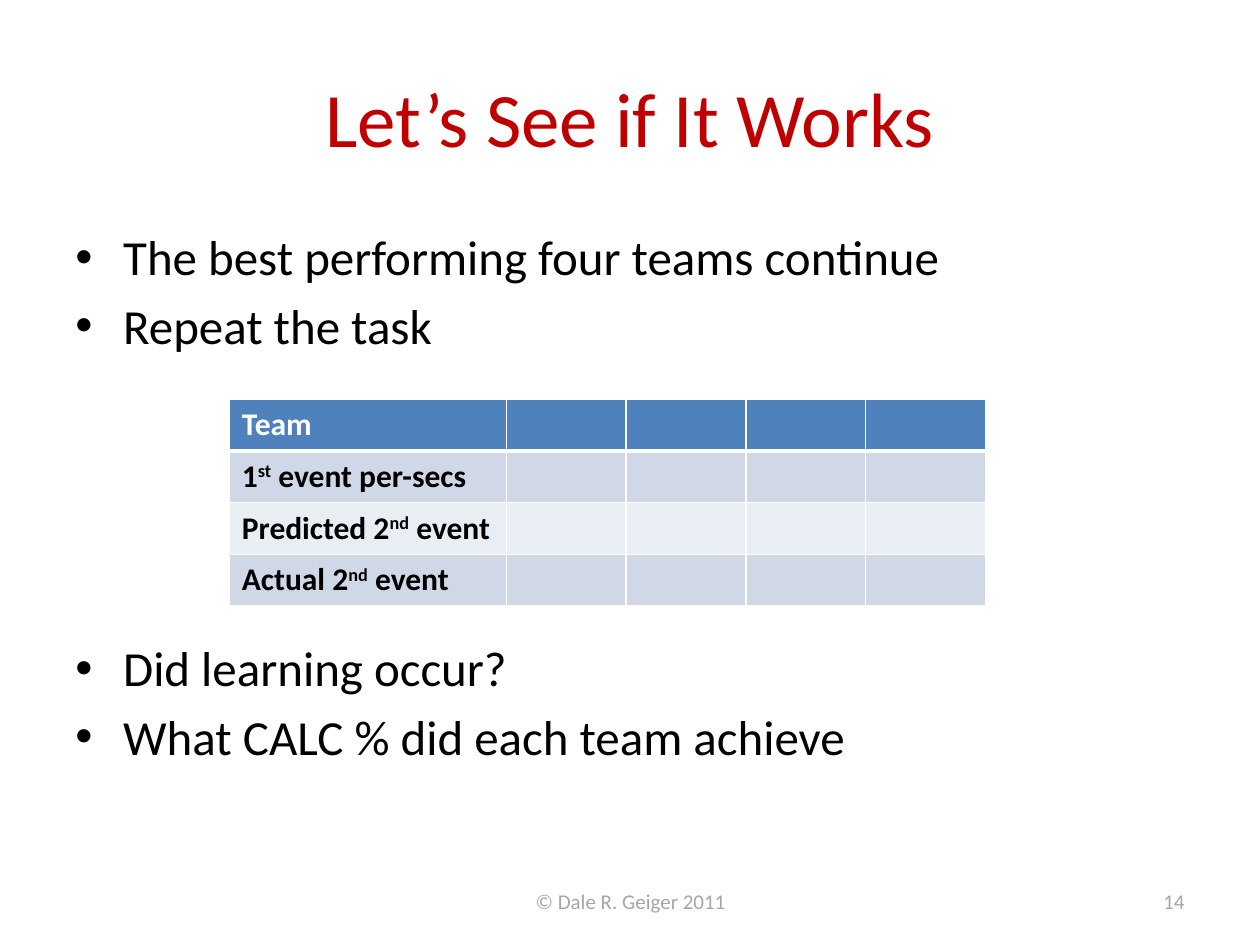
from lxml import etree
from pptx import Presentation
from pptx.dml.color import RGBColor
from pptx.enum import text as t
from pptx.oxml import ns
from pptx.util import Inches, Pt

TITLE = "Let’s See if It Works"
BULLETS = [
    ("The best performing four teams continue", 5.6),
    ("Repeat the task", 5.6),
    ("Did learning occur?", 162),
    ("What CALC % did each team achieve", 5.6),
]
FOOTER = "© Dale R. Geiger 2011"
PAGE = "14"
ROW_LABELS = ["Team", "1^st^ event per-secs", "Predicted 2^nd^ event", "Actual 2^nd^ event"]
ROW_FILLS = ["4F81BD", "D0D8E8", "E9EDF4", "D0D8E8"]
COLUMN_WIDTHS = [2.2] + [0.95] * 4
ROW_HEIGHT = 0.41


def color(value):
    return RGBColor.from_string(value)


def write(paragraph, content, size=18, ink="000000", bold=False,
          align=t.PP_ALIGN.LEFT, before=0, bullet=False):
    paragraph.alignment = align
    paragraph.space_before = Pt(before)
    if bullet:
        props = paragraph._p.get_or_add_pPr()
        props.set("marL", str(Inches(0.38)))
        props.set("indent", str(Inches(-0.38)))
        etree.SubElement(props, ns.qn("a:buFont")).set("typeface", "Arial")
        etree.SubElement(props, ns.qn("a:buChar")).set("char", "•")
    for index, part in enumerate(content.split("^")):
        run = paragraph.add_run()
        run.text = part
        font = run.font
        font.name, font.size, font.bold = "Calibri", Pt(size), bold
        font.color.rgb = color(ink)
        if index % 2:
            run._r.get_or_add_rPr().set("baseline", "30000")


def add_frame(slide, left, top, width, height, anchor=t.MSO_ANCHOR.MIDDLE):
    frame = slide.shapes.add_textbox(*map(Inches, (left, top, width, height))).text_frame
    frame.word_wrap = True
    frame.vertical_anchor = anchor
    return frame


def add_borders(cell, widths):
    props = cell._tc.get_or_add_tcPr()
    for side, width in widths.items():
        line = etree.SubElement(props, ns.qn(f"a:ln{side}"), w=str(Pt(width)))
        fill = etree.SubElement(line, ns.qn("a:solidFill"))
        etree.SubElement(fill, ns.qn("a:srgbClr"), val="FFFFFF")


def add_results(slide):
    results = slide.shapes.add_table(
        len(ROW_LABELS), len(COLUMN_WIDTHS), Inches(1.82), Inches(3.17),
        Inches(sum(COLUMN_WIDTHS)), Inches(ROW_HEIGHT * len(ROW_LABELS))).table
    for column, width in zip(results.columns, COLUMN_WIDTHS):
        column.width = Inches(width)
    for r, (label, fill) in enumerate(zip(ROW_LABELS, ROW_FILLS)):
        results.rows[r].height = Inches(ROW_HEIGHT)
        for cell in results.rows[r].cells:
            add_borders(cell, {"L": 1, "R": 1, "T": 3 if r == 1 else 1, "B": 3 if r == 0 else 1})
            cell.fill.solid()
            cell.fill.fore_color.rgb = color(fill)
        write(results.cell(r, 0).text_frame.paragraphs[0], label, bold=True,
              ink="000000" if r else "FFFFFF")


def main():
    deck = Presentation()
    deck.slide_width, deck.slide_height = Inches(10), Inches(7.5)
    slide = deck.slides.add_slide(deck.slide_layouts[6])

    title = add_frame(slide, 0.5, 0.3, 9, 1.25)
    write(title.paragraphs[0], TITLE, size=44, ink="C00000", align=t.PP_ALIGN.CENTER)

    body = add_frame(slide, 0.5, 1.75, 9, 4.95, t.MSO_ANCHOR.TOP)
    for index, (bullet, before) in enumerate(BULLETS):
        paragraph = body.add_paragraph() if index else body.paragraphs[0]
        write(paragraph, bullet, size=28, before=before, bullet=True)

    footer = add_frame(slide, 3.42, 6.95, 3.17, 0.4)
    write(footer.paragraphs[0], FOOTER, size=12, ink="A6A6A6", align=t.PP_ALIGN.CENTER)
    page = add_frame(slide, 7.17, 6.95, 2.33, 0.4)
    write(page.paragraphs[0], PAGE, size=12, ink="A6A6A6", align=t.PP_ALIGN.RIGHT)

    add_results(slide)
    deck.save("out.pptx")


if __name__ == "__main__":
    main()
